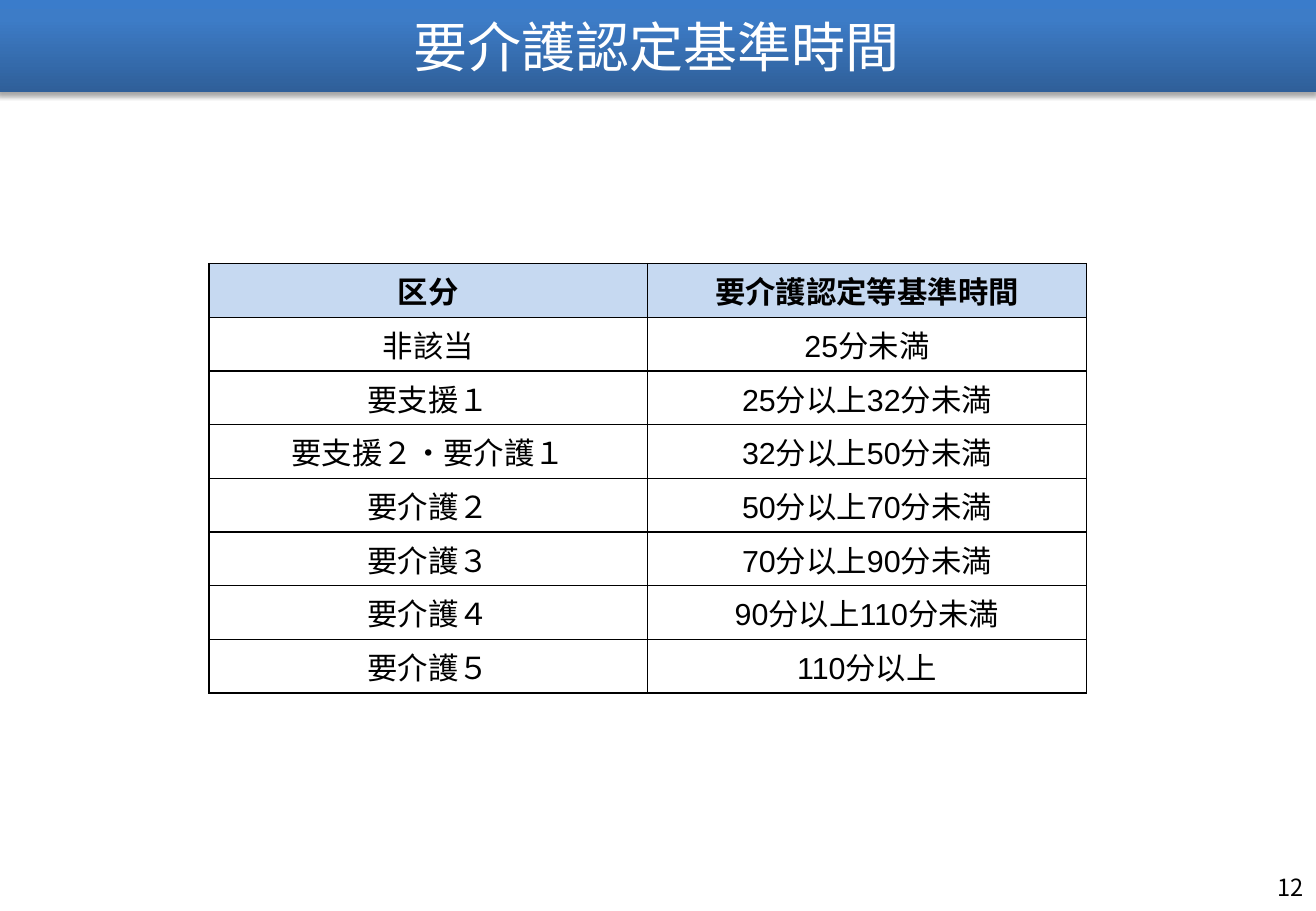
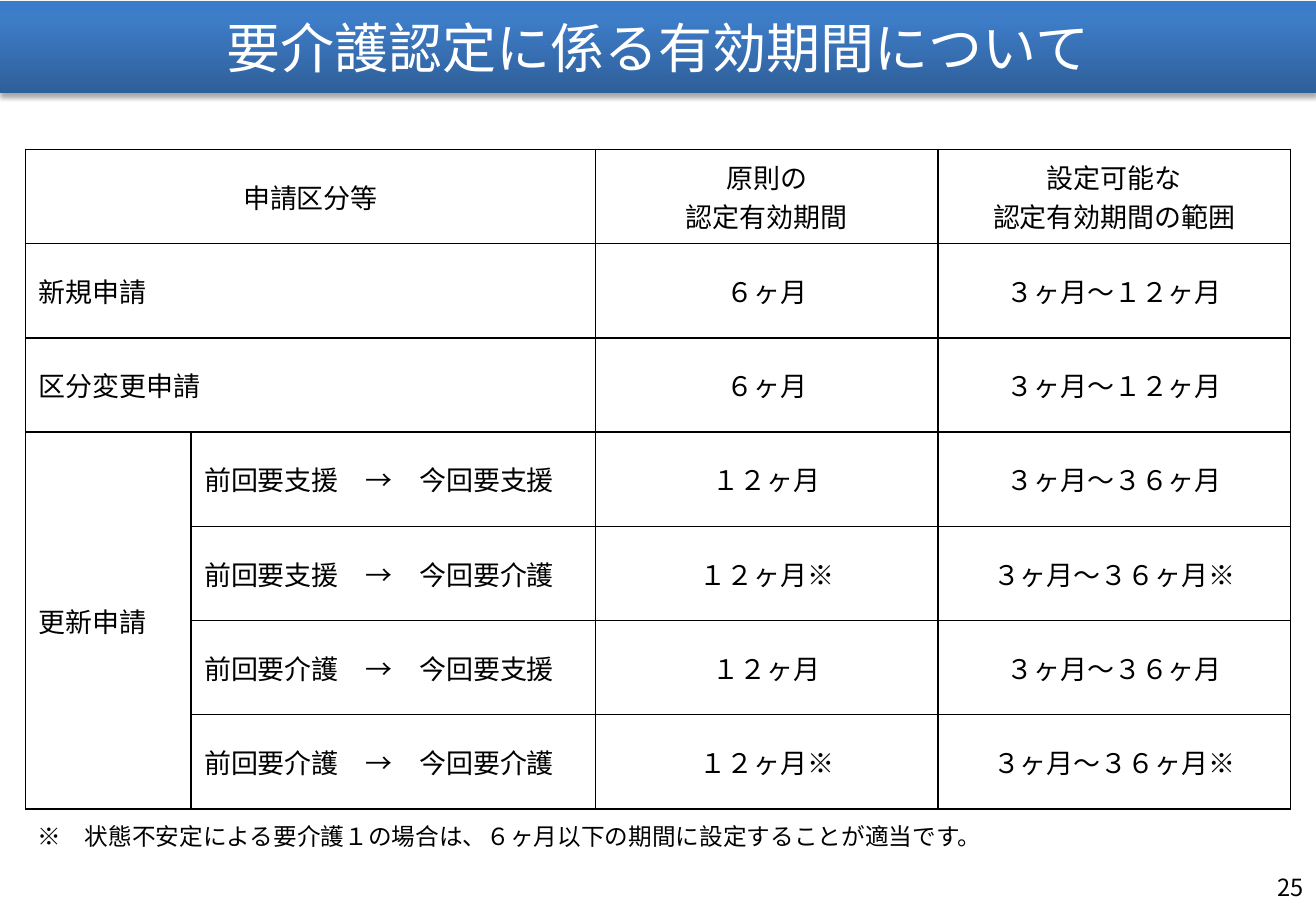
from dataclasses import dataclass

from lxml.etree import SubElement
from pptx import Presentation
from pptx.dml.color import RGBColor
from pptx.enum.text import MSO_ANCHOR, MSO_AUTO_SIZE, PP_ALIGN
from pptx.oxml import parse_xml
from pptx.oxml.ns import nsdecls, qn
from pptx.util import Inches, Pt


@dataclass(frozen=True)
class Theme:
    black: str = "000000"
    white: str = "FFFFFF"
    header: str = "C6D9F1"
    band_stops: tuple = ((0, "2F5F99"), (80, "3D7CC7"), (100, "3A7CCB"))
    title_font: str = "Calibri"
    table_font: str = "Arial"
    japanese_font: str = "Noto Sans CJK JP"
    title_size: int = 32
    small_size: int = 14
    border: float = 1


theme = Theme()

# The grid divides the slide into 100 columns and 100 rows.
presentation = Presentation()
presentation.slide_width, presentation.slide_height = Inches(10.83), Inches(7.5)
column_unit = presentation.slide_width / 100
row_unit = presentation.slide_height / 100


def grid_box(left, top, width, height):
    """Turn columns and rows of the grid into lengths."""
    return (round(left * column_unit), round(top * row_unit),
            round(width * column_unit), round(height * row_unit))


def write_text(text_frame, text, size=theme.small_size, font=theme.japanese_font,
               color=theme.black, bold=False, align=PP_ALIGN.LEFT, line_spacing=None):
    """Write one paragraph for each line of the text."""
    text_frame.word_wrap = True
    for index, line in enumerate(text.split("\n")):
        paragraph = text_frame.add_paragraph() if index else text_frame.paragraphs[0]
        paragraph.alignment = align
        paragraph.line_spacing = line_spacing
        run = paragraph.add_run()
        run.text = line
        run.font.size, run.font.name, run.font.bold = Pt(size), font, bold
        run.font.color.rgb = RGBColor.from_string(color)
        SubElement(run.font._element, qn("a:ea"), typeface=theme.japanese_font)


gradient_stops = "".join(
    f'<a:gs pos="{position * 1000}"><a:srgbClr val="{color}"/></a:gs>'
    for position, color in theme.band_stops)
band_styles = (
    f'<a:gradFill {nsdecls("a")} rotWithShape="1"><a:gsLst>{gradient_stops}</a:gsLst>'
    '<a:lin ang="16200000" scaled="0"/></a:gradFill>',
    f'<a:effectLst {nsdecls("a")}><a:outerShdw blurRad="{Pt(3.1)}" dist="{Pt(1.8)}" '
    f'dir="5400000" rotWithShape="0"><a:srgbClr val="{theme.black}">'
    '<a:alpha val="35000"/></a:srgbClr></a:outerShdw></a:effectLst>',
)

slides = [
    {
        "title": "要介護認定基準時間",
        "band": (-0.18, 0, 100.18, 10.13),
        "number": "12",
        "table": (15.88, 28.93, 66.67, 47.2),
        "column_weights": (1, 1),
        "size": 18,
        "header_fill": True,
        "left_columns": 0,
        "merges": (),
        "rows": (
            ("区分", "要介護認定等基準時間"),
            ("非該当", "25分未満"),
            ("要支援１", "25分以上32分未満"),
            ("要支援２・要介護１", "32分以上50分未満"),
            ("要介護２", "50分以上70分未満"),
            ("要介護３", "70分以上90分未満"),
            ("要介護４", "90分以上110分未満"),
            ("要介護５", "110分以上"),
        ),
        "note": None,
    },
    {
        "title": "要介護認定に係る有効期間について",
        "band": (0, 0.13, 100, 10.13),
        "number": "25",
        "table": (1.94, 16.4, 96.12, 72.4),
        "column_weights": (1.36, 3.33, 2.82, 2.9),
        "size": 16,
        "header_fill": False,
        "left_columns": 2,
        "merges": ((0, 0, 0, 1), (1, 0, 1, 1), (2, 0, 2, 1), (3, 0, 6, 0)),
        "rows": (
            ("申請区分等", None, "原則の\n認定有効期間", "設定可能な\n認定有効期間の範囲"),
            ("新規申請", None, "６ヶ月", "３ヶ月～１２ヶ月"),
            ("区分変更申請", None, "６ヶ月", "３ヶ月～１２ヶ月"),
            ("更新申請", "前回要支援　→　今回要支援", "１２ヶ月", "３ヶ月～３６ヶ月"),
            (None, "前回要支援　→　今回要介護", "１２ヶ月※", "３ヶ月～３６ヶ月※"),
            (None, "前回要介護　→　今回要支援", "１２ヶ月", "３ヶ月～３６ヶ月"),
            (None, "前回要介護　→　今回要介護", "１２ヶ月※", "３ヶ月～３６ヶ月※"),
        ),
        "note": "※　状態不安定による要介護１の場合は、６ヶ月以下の期間に設定することが適当です。",
    },
]

for content in slides:
    slide = presentation.slides.add_slide(presentation.slide_layouts[5])

    # Title band
    title = slide.shapes.title
    title.left, title.top, title.width, title.height = grid_box(*content["band"])
    for style in band_styles:
        title._element.spPr.append(parse_xml(style))
    title.text_frame.auto_size = MSO_AUTO_SIZE.NONE
    title.text_frame.vertical_anchor = MSO_ANCHOR.MIDDLE
    write_text(title.text_frame, content["title"], size=theme.title_size,
               font=theme.title_font, color=theme.white, align=PP_ALIGN.CENTER)

    # Table
    rows, weights = content["rows"], content["column_weights"]
    left, top, width, height = grid_box(*content["table"])
    table = slide.shapes.add_table(len(rows), len(weights), left, top, width, height).table
    table.first_row = table.horz_banding = False
    for column, weight in zip(table.columns, weights):
        column.width = round(width * weight / sum(weights))
    for row in table.rows:
        row.height = round(height / len(rows))
    for first_row, first_column, last_row, last_column in content["merges"]:
        table.cell(first_row, first_column).merge(table.cell(last_row, last_column))

    for row_index, texts in enumerate(rows):
        for column_index, text in enumerate(texts):
            cell = table.cell(row_index, column_index)
            filled = content["header_fill"] and row_index == 0
            centered = row_index == 0 or column_index >= content["left_columns"]
            cell.vertical_anchor = MSO_ANCHOR.MIDDLE
            cell.margin_left = cell.margin_right = Inches(0.11)
            cell.margin_top = cell.margin_bottom = Inches(0.04)
            properties = cell._tc.get_or_add_tcPr()
            for side in ("lnL", "lnR", "lnT", "lnB"):
                properties.append(parse_xml(
                    f'<a:{side} {nsdecls("a")} w="{Pt(theme.border)}"><a:solidFill>'
                    f'<a:srgbClr val="{theme.black}"/></a:solidFill></a:{side}>'))
            if filled:
                cell.fill.solid()
                cell.fill.fore_color.rgb = RGBColor.from_string(theme.header)
            else:
                cell.fill.background()
            if text:
                write_text(cell.text_frame, text, size=content["size"],
                           font=theme.table_font, bold=filled,
                           align=PP_ALIGN.CENTER if centered else PP_ALIGN.LEFT)

    # Note and page number
    if content["note"]:
        note = slide.shapes.add_textbox(*grid_box(1.94, 90.13, 72.67, 4.67))
        write_text(note.text_frame, content["note"], line_spacing=0.82)
    number = slide.shapes.add_textbox(*grid_box(76.73, 94.67, 23.27, 5.33))
    number.text_frame.vertical_anchor = MSO_ANCHOR.MIDDLE
    write_text(number.text_frame, content["number"], align=PP_ALIGN.RIGHT)

presentation.save("out.pptx")
